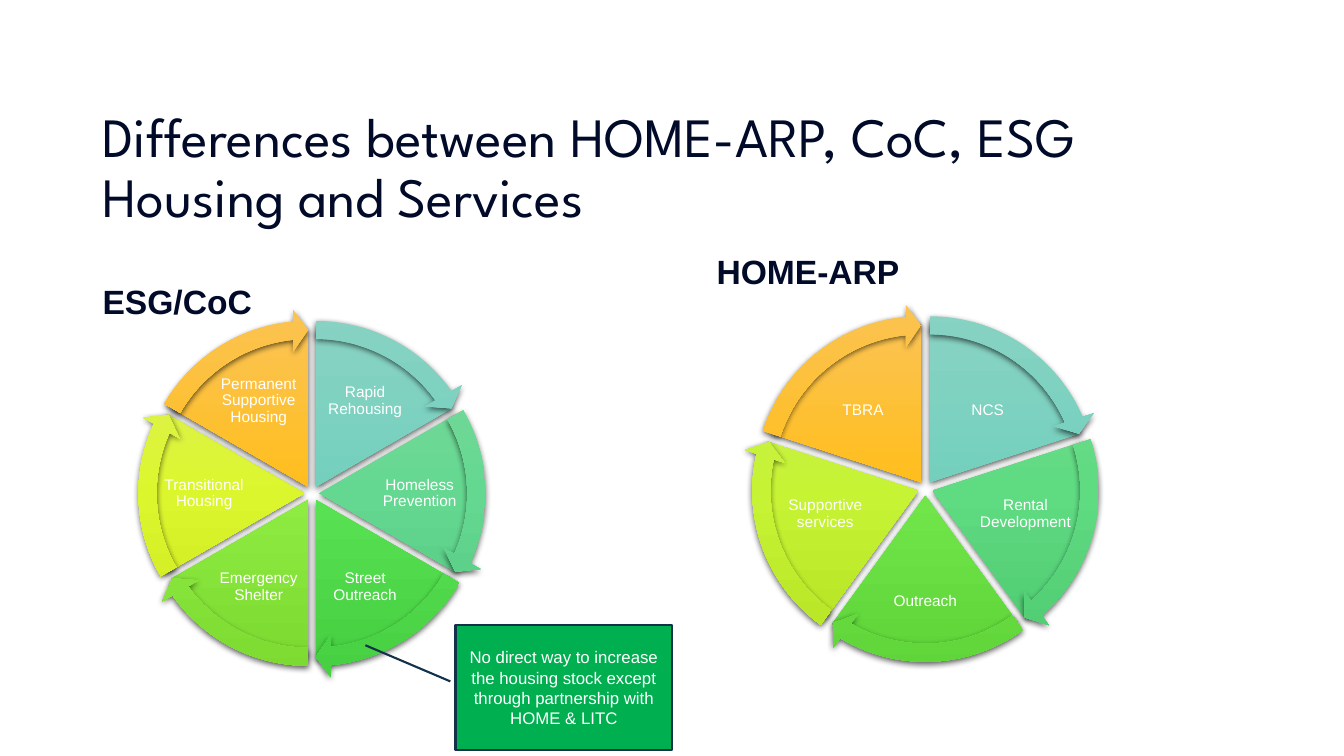
from math import cos, radians, sin

from pptx import Presentation
from pptx.dml.color import RGBColor
from pptx.enum.shapes import MSO_SHAPE as Shape
from pptx.enum.text import MSO_ANCHOR as Anchor, PP_ALIGN as Align
from pptx.oxml import parse_xml
from pptx.oxml.ns import nsdecls, qn
from pptx.util import Pt

NAVY, WHITE = "010B29", "FFFFFF"
WHEEL_SIZE, ARROW_SIZE, SLICE_GAP = 226, 254, 5.4
ANGLE_UNIT = 0.6  # adjustment units per degree
HEAD_ANGLE = 3.275

TEAL = ("88D2C3", "74D0BD", "62BEAB")
AMBER = ("FBC352", "FFBE1D", "E5AA17")

# label, label centre relative to the wheel centre, gradient colours
ESG_SLICES = [
    ("Rapid Rehousing", (38, -66), TEAL),
    ("Homeless Prevention", (77, 0), ("7CD99E", "64D890", "52C67F")),
    ("Street Outreach", (38, 67), ("73E070", "58E153", "47D042")),
    ("Emergency Shelter", (-38, 67), ("9BE864", "8EEB41", "7DDA31")),
    ("Transitional Housing", (-77, 0), ("DBF15A", "DCF62E", "CBE51F")),
    ("Permanent Supportive Housing", (-38, -66), AMBER),
]
HOME_SLICES = [
    ("NCS", (44.5, -55.5), TEAL),
    ("Rental Development", (71.5, 18.5), ("79DB92", "5FDB82", "4EC970")),
    ("Outreach", (0, 81), ("84E46A", "70E64A", "5FD539")),
    ("Supportive services", (-71.5, 18.5), ("C9EF5C", "C6F333", "B5E223")),
    ("TBRA", (-44.5, -55.5), AMBER),
]


def color(value):
    return RGBColor.from_string(value)


def write(shape, text, size, ink, font="Arial", anchor=Anchor.MIDDLE,
          align=Align.LEFT, spacing=0.9, bold=False, inset=None):
    frame = shape.text_frame
    frame.word_wrap = True
    frame.vertical_anchor = anchor
    if inset is not None:
        frame.margin_left = frame.margin_right = Pt(inset)
        frame.margin_top = frame.margin_bottom = Pt(inset)
    para = frame.paragraphs[0]
    para.text = text
    para.alignment = align
    para.line_spacing = spacing
    para.font.name = font
    para.font.size = Pt(size)
    para.font.bold = bold
    para.font.color.rgb = color(ink)


def add_text(page, box, text, size, ink, **options):
    shape = page.shapes.add_textbox(*map(Pt, box))
    write(shape, text, size, ink, **options)


def add_glossy(page, kind, center, size, adjustments, colors):
    """Add a square shape with a vertical gradient and a soft shadow."""
    x, y = center
    box = (x - size / 2, y - size / 2, size, size)
    shape = page.shapes.add_shape(kind, *map(Pt, box))
    for index, value in enumerate(adjustments):
        shape.adjustments[index] = value
    shape.line.fill.background()
    shape.shadow.inherit = False
    stops = "".join(
        f'<a:gs pos="{index * 50000}"><a:srgbClr val="{value}"/></a:gs>'
        for index, value in enumerate(colors))
    properties = shape._element.spPr
    properties.find(qn("a:prstGeom")).addnext(parse_xml(
        f'<a:gradFill {nsdecls("a")} rotWithShape="1"><a:gsLst>{stops}</a:gsLst>'
        '<a:lin ang="5400000" scaled="0"/></a:gradFill>'))
    properties.find(qn("a:effectLst")).append(parse_xml(
        f'<a:outerShdw {nsdecls("a")} blurRad="57150" dist="19050" dir="5400000" '
        'algn="ctr" rotWithShape="0"><a:srgbClr val="000000">'
        '<a:alpha val="63000"/></a:srgbClr></a:outerShdw>'))


def add_cycle(page, center, slices, label_width, label_height):
    """Add a wheel of separated slices, each edged by a clockwise arrow."""
    x, y = center
    step = 360 / len(slices)
    arrows = []
    for index, (label, (dx, dy), colors) in enumerate(slices):
        angle = 270 + index * step
        middle = radians(angle + step / 2)
        hub = (x + SLICE_GAP * cos(middle), y + SLICE_GAP * sin(middle))
        start = angle % 360 * ANGLE_UNIT
        end = (angle + step) % 360 * ANGLE_UNIT
        add_glossy(page, Shape.PIE, hub, WHEEL_SIZE, (start, end), colors)
        label_box = (x + dx - label_width / 2, y + dy - label_height / 2,
                     label_width, label_height)
        add_text(page, label_box, label, 11, WHITE, align=Align.CENTER, inset=1.5)
        bends = (0.051, HEAD_ANGLE, end - HEAD_ANGLE, start, 0.059)
        arrows.append((hub, ARROW_SIZE, bends, colors))
    for arrow in arrows:
        add_glossy(page, Shape.CIRCULAR_ARROW, *arrow)


def add_callout(page, box, text):
    callout = page.shapes.add_shape(Shape.LINE_CALLOUT_1, *map(Pt, box))
    for index, value in enumerate((0.452, -0.024, 0.163, -0.416)):
        callout.adjustments[index] = value
    callout.shadow.inherit = False
    callout.fill.solid()
    callout.fill.fore_color.rgb = color("00B050")
    callout.line.color.rgb = color("11324A")
    callout.line.width = Pt(1.5)
    write(callout, text, 12, WHITE, align=Align.CENTER, spacing=1.0)


def add_heading(page, box, text):
    add_text(page, box, text, 24, NAVY, anchor=Anchor.BOTTOM, bold=True)


def main():
    deck = Presentation()
    deck.slide_width, deck.slide_height = Pt(960), Pt(540)
    page = deck.slides.add_slide(deck.slide_layouts[6])
    add_text(page, (66.2, 86.4, 828, 69.1),
             "Differences between HOME-ARP, CoC, ESG Housing and Services",
             39.6, NAVY, font="League Spartan")
    add_heading(page, (66.2, 168.5, 406, 64.8), "ESG/CoC")
    add_cycle(page, (222.8, 352.4), ESG_SLICES, 62, 46)
    add_heading(page, (504.7, 146.9, 408, 64.8), "HOME-ARP")
    add_cycle(page, (661, 348.8), HOME_SLICES, 70, 54)
    add_callout(page, (325.4, 446.4, 154.8, 89.3),
                "No direct way to increase the housing stock except "
                "through partnership with HOME & LITC")
    deck.save("out.pptx")


if __name__ == "__main__":
    main()
